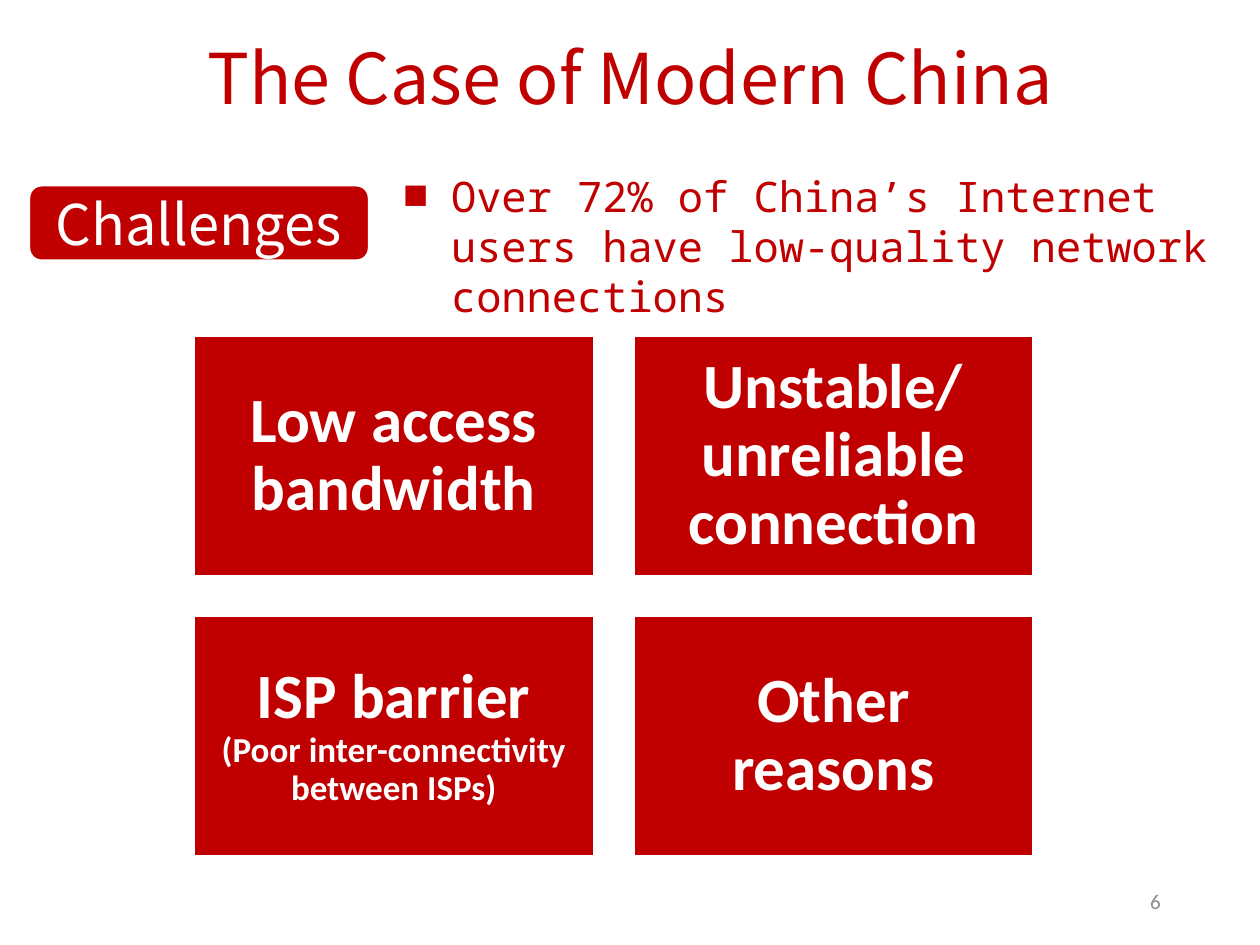
from lxml import etree
from pptx import Presentation
from pptx.dml.color import RGBColor
from pptx.enum.shapes import MSO_SHAPE
from pptx.enum.text import MSO_ANCHOR, MSO_AUTO_SIZE, PP_ALIGN
from pptx.oxml.ns import qn
from pptx.util import Inches, Pt

ROUNDED, RECTANGLE = MSO_SHAPE.ROUNDED_RECTANGLE, MSO_SHAPE.RECTANGLE
TOP, MIDDLE = MSO_ANCHOR.TOP, MSO_ANCHOR.MIDDLE
LEFT, CENTER, RIGHT = PP_ALIGN.LEFT, PP_ALIGN.CENTER, PP_ALIGN.RIGHT
GROW = MSO_AUTO_SIZE.SHAPE_TO_FIT_TEXT

COLORS = {"red": "C00000", "white": "FFFFFF", "gray": "8C8C8C"}
HEADING_FONT, BULLET_FONT, CARD_FONT = "Noto Sans CJK SC", "Noto Sans Mono", "Calibri"

REASONS = [
    [("Low access bandwidth", 36)],
    [("Unstable/ unreliable connection", 36)],
    [("ISP barrier", 36), (" ", 28), ("(Poor inter-connectivity between ISPs)", 20)],
    [("Other reasons", 36)],
]


def rgb(name):
    """Return the palette colour of that name."""
    return RGBColor.from_string(COLORS[name])


def place(part, box):
    """Move a part to a (left, top, width, height) box in inches."""
    part.left, part.top, part.width, part.height = map(Inches, box)


def write(part, runs, font, color, align, anchor=MIDDLE, bold=False):
    """Write (text, size) runs as the single paragraph of a part."""
    frame = part.text_frame
    frame.word_wrap = True
    frame.vertical_anchor = anchor
    paragraph = frame.paragraphs[0]
    paragraph.alignment = align
    for text, size in runs:
        run = paragraph.add_run()
        run.text = text
        run.font.name = font
        run.font.size = Pt(size)
        run.font.bold = bold
        run.font.color.rgb = rgb(color)
    return paragraph


def add_panel(slide, kind, box, border):
    """Add a red panel with a white border."""
    panel = slide.shapes.add_shape(kind, *map(Inches, box))
    panel.shadow.inherit = False
    panel.fill.solid()
    panel.fill.fore_color.rgb = rgb("red")
    panel.line.color.rgb = rgb("white")
    panel.line.width = Pt(border)
    return panel


def fill_title(slide, box):
    """Place the slide title."""
    title = slide.shapes.title
    place(title, box)
    write(title, [("The Case of Modern China", 40)], HEADING_FONT, "red", CENTER, TOP)
    title.text_frame.word_wrap = False
    title.text_frame.auto_size = GROW


def add_challenges_tag(slide, box):
    """Add the rounded section tag."""
    tag = add_panel(slide, ROUNDED, box, 1.5)
    write(tag, [("Challenges", 32)], HEADING_FONT, "white", CENTER)


def fill_key_finding(slide, box):
    """Place the square-bulleted finding in the body placeholder."""
    finding = slide.placeholders[1]
    place(finding, box)
    text = "Over 72% of China’s Internet users have low-quality network connections"
    paragraph = write(finding, [(text, 24)], BULLET_FONT, "red", LEFT, TOP)
    finding.text_frame.auto_size = GROW
    paragraph.space_before = Pt(0)
    properties = paragraph._p.get_or_add_pPr()
    properties.set("marL", str(Inches(0.38)))
    properties.set("indent", str(-Inches(0.38)))
    etree.SubElement(properties, qn("a:buFont")).set("typeface", BULLET_FONT)
    etree.SubElement(properties, qn("a:buChar")).set("char", "■")


def add_reason_grid(slide, box, gap=0.32, columns=2):
    """Add the reason cards in an evenly spaced grid."""
    left, top, width, height = box
    rows = len(REASONS) // columns
    card_width = (width - gap * (columns - 1)) / columns
    card_height = (height - gap * (rows - 1)) / rows
    for index, runs in enumerate(REASONS):
        row, column = divmod(index, columns)
        card_box = (left + column * (card_width + gap),
                    top + row * (card_height + gap), card_width, card_height)
        card = add_panel(slide, RECTANGLE, card_box, 1)
        frame = card.text_frame
        frame.margin_left = frame.margin_right = Inches(0.15)
        frame.margin_top = frame.margin_bottom = Inches(0.15)
        paragraph = write(card, runs, CARD_FONT, "white", CENTER, bold=True)
        paragraph.line_spacing = 0.9


def add_page_number(slide, box):
    """Add the page number at the lower right."""
    page_number = slide.shapes.add_textbox(*map(Inches, box))
    write(page_number, [("6", 12)], CARD_FONT, "gray", RIGHT)


def main():
    """Build and save the slide."""
    deck = Presentation()
    deck.slide_width, deck.slide_height = Inches(10), Inches(7.5)
    slide = deck.slides.add_slide(deck.slide_layouts[1])
    add_page_number(slide, (7.06, 6.95, 2.25, 0.4))
    fill_title(slide, (1.34, 0.22, 7.32, 0.77))
    add_challenges_tag(slide, (0.23, 1.47, 2.7, 0.6))
    fill_key_finding(slide, (3.1, 1.3, 6.62, 0.91))
    add_reason_grid(slide, (1.54, 2.67, 6.66, 4.12))
    deck.save("out.pptx")


if __name__ == "__main__":
    main()
